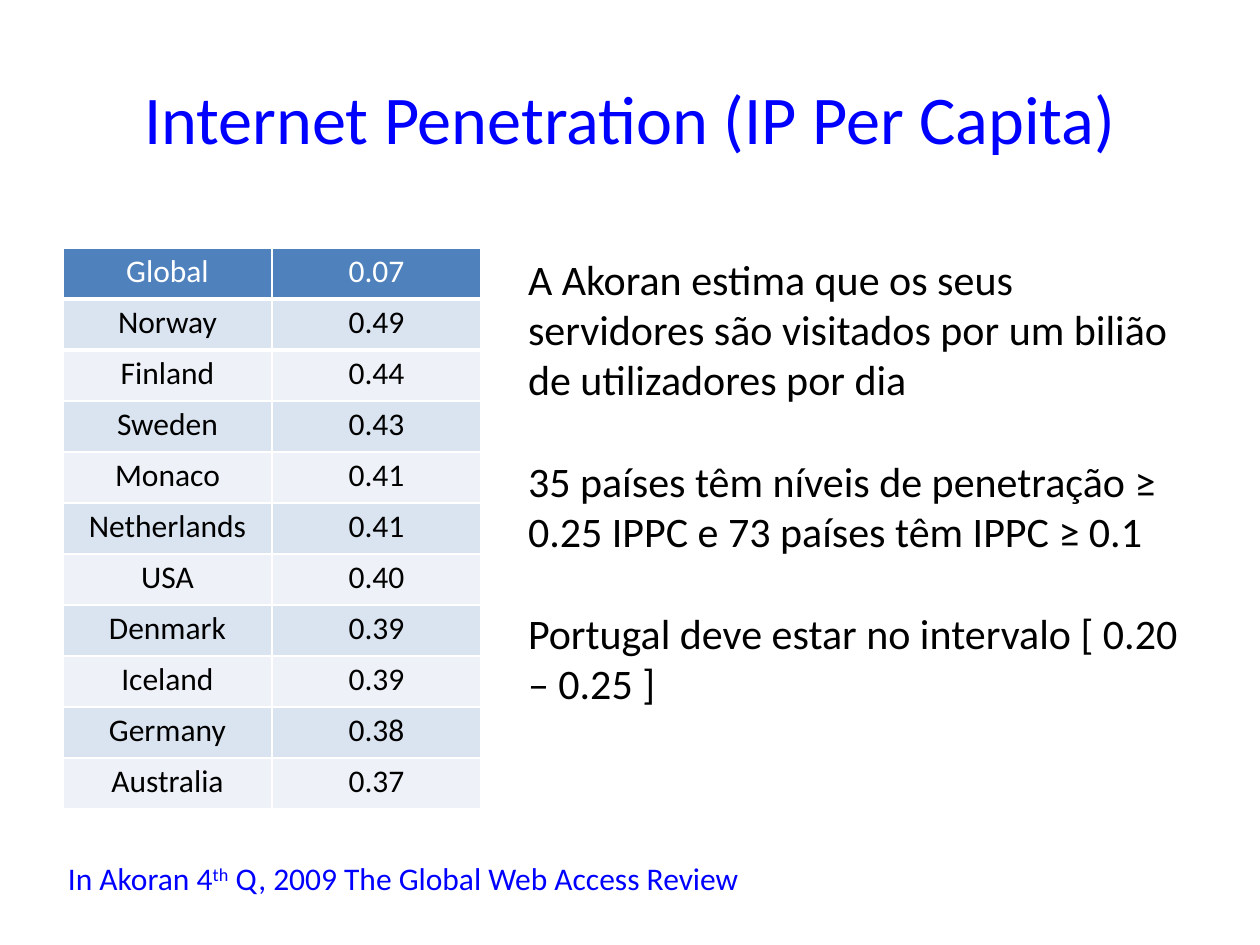
from pptx import Presentation
from pptx.dml.color import RGBColor
from pptx.enum.text import MSO_ANCHOR, MSO_AUTO_SIZE, PP_ALIGN
from pptx.util import Pt
from lxml import etree

CENTER, LEFT = PP_ALIGN.CENTER, PP_ALIGN.LEFT
TOP, MIDDLE = MSO_ANCHOR.TOP, MSO_ANCHOR.MIDDLE
FIXED = MSO_AUTO_SIZE.NONE
NS = "{http://schemas.openxmlformats.org/drawingml/2006/main}"

TITLE = "Internet Penetration (IP Per Capita)"
RATES = [
    ("Global", "0.07"),
    ("Norway", "0.49"),
    ("Finland", "0.44"),
    ("Sweden", "0.43"),
    ("Monaco", "0.41"),
    ("Netherlands", "0.41"),
    ("USA", "0.40"),
    ("Denmark", "0.39"),
    ("Iceland", "0.39"),
    ("Germany", "0.38"),
    ("Australia", "0.37"),
]
NOTES = [
    "A Akoran estima que os seus servidores são visitados por um bilião "
    "de utilizadores por dia",
    "35 países têm níveis de penetração ≥ 0.25 IPPC e 73 países têm IPPC ≥ 0.1",
    "Portugal deve estar no intervalo [ 0.20 – 0.25 ]",
]
SOURCE = ["In Akoran 4", "th", " Q, 2009 The Global Web Access Review"]

BLUE, BLACK, WHITE = "0000FF", "000000", "FFFFFF"
HEAD, BANDS = "4F81BD", ("DAE4F1", "EEF2F8")
SIDE, UPPER = 63, 248
COL, ROW, INSET = 209, 51, 5


def px(n):
    return round(n * 914400 / 126)


def color(code):
    return RGBColor.from_string(code)


def style(para, size, code, align=LEFT):
    para.alignment = align
    for run in para.runs:
        font = run.font
        font.name, font.size, font.bold = "Calibri", Pt(size), False
        font.color.rgb = color(code)


def place(shape, left, top, width, height, anchor=TOP):
    shape.left, shape.top = px(left), px(top)
    shape.width, shape.height = px(width), px(height)
    frame = shape.text_frame
    frame.word_wrap, frame.auto_size = True, FIXED
    frame.vertical_anchor = anchor
    inset(frame)
    return frame


def inset(box):
    box.margin_left = box.margin_right = px(INSET)
    box.margin_top = box.margin_bottom = px(INSET)


def rule(cell, edge, width):
    """Draw a white border on one edge of a cell."""
    line = etree.Element(NS + edge, w=str(Pt(width)))
    fill = etree.SubElement(line, NS + "solidFill")
    etree.SubElement(fill, NS + "srgbClr", val=WHITE)
    cell._tc.get_or_add_tcPr().insert(0, line)


deck = Presentation()
deck.slide_width, deck.slide_height = px(1260), px(945)
slide = deck.slides.add_slide(deck.slide_layouts[1])
title, body = slide.placeholders

frame = place(title, SIDE, 38, 1134, 158, MIDDLE)
frame.text = TITLE
style(frame.paragraphs[0], 39, BLUE, CENTER)

table = slide.shapes.add_table(
    len(RATES), 2, px(SIDE), px(UPPER), px(2 * COL), px(len(RATES) * ROW)
).table
for col in table.columns:
    col.width = px(COL)
for i, rate in enumerate(RATES):
    table.rows[i].height = px(ROW)
    for j, text in enumerate(rate):
        cell = table.cell(i, j)
        cell.text = text
        inset(cell)
        cell.fill.solid()
        cell.fill.fore_color.rgb = color(BANDS[(i - 1) % 2] if i else HEAD)
        style(cell.text_frame.paragraphs[0], 18, BLACK if i else WHITE, CENTER)
        if i < 2:
            rule(cell, "lnT" if i else "lnB", 3)

frame = place(body, 523, UPPER, 675, 467)
frame.text = "\n".join(NOTES)
for i, para in enumerate(frame.paragraphs):
    style(para, 24, BLACK)
    para.space_before = Pt(29.3 if i else 0)
    props = para._p.get_or_add_pPr()
    props.set("marL", "0")
    props.set("indent", "0")
    etree.SubElement(props, NS + "buNone")

foot = slide.shapes.add_textbox(0, 0, 0, 0)
frame = place(foot, SIDE, 854, 1135, 49)
para = frame.paragraphs[0]
for part in SOURCE:
    para.add_run().text = part
style(para, 18, BLUE)
para.runs[1].font._element.set("baseline", "30000")

deck.save("out.pptx")
